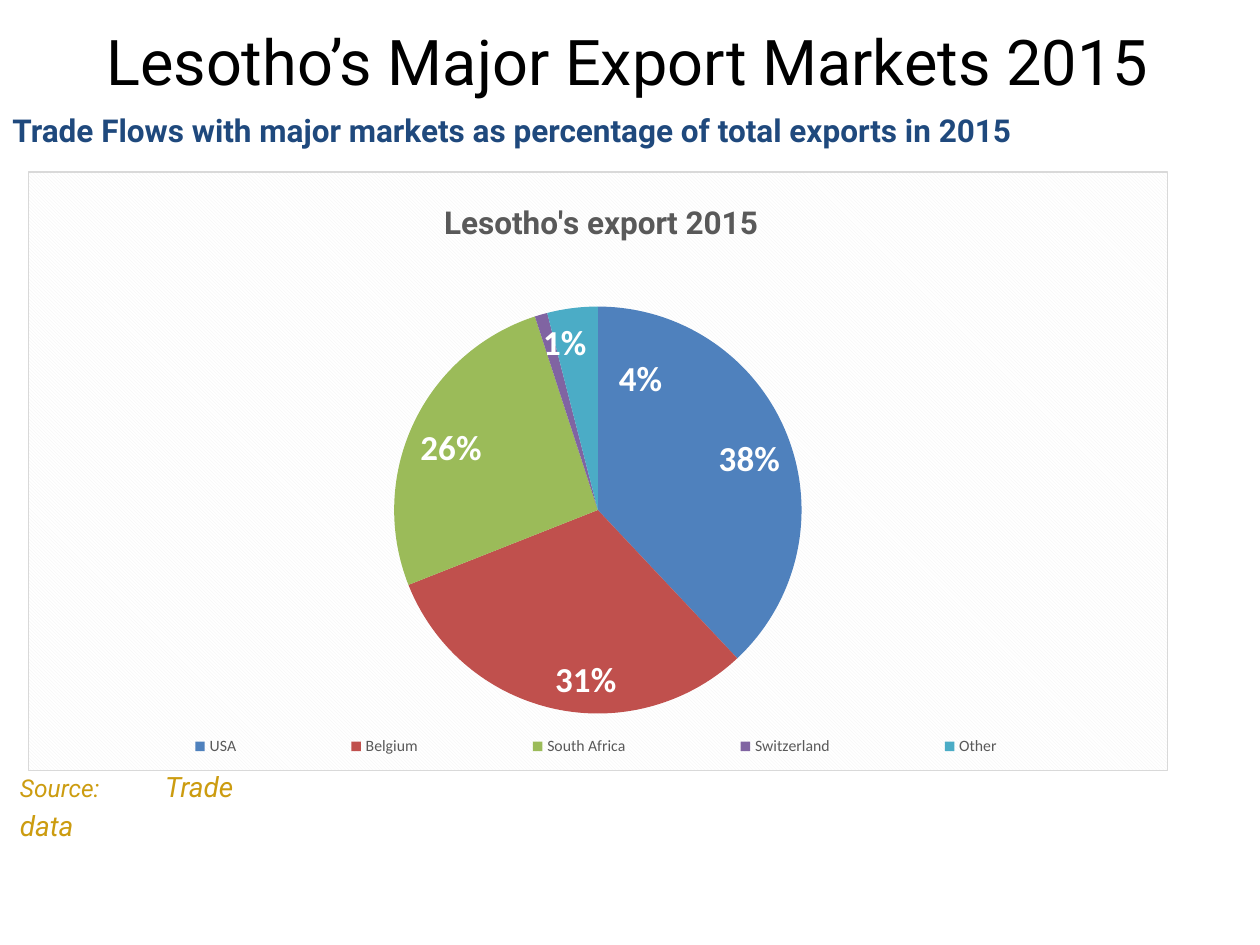
from pptx import Presentation
from pptx.chart.data import CategoryChartData
from pptx.dml.color import RGBColor
from pptx.enum.chart import XL_CHART_TYPE, XL_LABEL_POSITION, XL_LEGEND_POSITION
from pptx.enum.text import MSO_ANCHOR, PP_ALIGN
from pptx.oxml import parse_xml
from pptx.oxml.ns import nsdecls, qn
from pptx.util import Inches, Pt

MARKETS = {
    "USA": (38, "4F81BD"),
    "Belgium": (31, "C0504D"),
    "South Africa": (26, "9BBB59"),
    "Switzerland": (1, "8064A2"),
    "Other ": (4, "4BACC6"),
}


def color(hex_value):
    return RGBColor.from_string(hex_value)


def style_font(font, hex_value, **formats):
    font.color.rgb = color(hex_value)
    for attribute, value in formats.items():
        setattr(font, attribute, value)


def add_text(slide, box, runs, frame_format, paragraph_format):
    frame = slide.shapes.add_textbox(*map(Inches, box)).text_frame
    paragraph = frame.paragraphs[0]
    for target, formats in ((frame, frame_format), (paragraph, paragraph_format)):
        for attribute, value in formats.items():
            setattr(target, attribute, value)
    for text, hex_value, formats in runs:
        run = paragraph.add_run()
        run.text = text
        style_font(run.font, hex_value, name="Roboto", **formats)


def add_heading(slide, box):
    add_text(slide, box,
             [("Lesotho’s Major Export Markets 2015", "000000", {"size": Pt(36)})],
             {"word_wrap": True, "vertical_anchor": MSO_ANCHOR.MIDDLE},
             {"alignment": PP_ALIGN.CENTER})


def add_subtitle(slide, box):
    add_text(slide, box,
             [("Trade Flows with major markets as percentage of total exports in 2015",
               "1F497D", {"size": Pt(18), "bold": True})],
             {"word_wrap": True}, {})


def add_source(slide, box):
    add_text(slide, box,
             [("Source: ", "CC9C10", {"size": Pt(14), "italic": True}),
              ("Trade data", "CC9C10", {"size": Pt(16), "italic": True})],
             {"word_wrap": False},
             {"alignment": PP_ALIGN.JUSTIFY, "line_spacing": 1.15, "space_after": Pt(8)})


def manual_layout(target="", edge_mode=True, **values):
    parts = [f'<c:layoutTarget val="{target}"/>'] if target else []
    if edge_mode:
        parts += [f'<c:{axis}Mode val="edge"/>' for axis in "xy"]
    parts += [f'<c:{key} val="{value}"/>' for key, value in values.items()]
    return (f'<c:layout {nsdecls("c")}><c:manualLayout>{"".join(parts)}'
            '</c:manualLayout></c:layout>')


def place_part(part, after, layout):
    for old_layout in part.findall(qn("c:layout")):
        part.remove(old_layout)
    new_layout = parse_xml(layout)
    if after is None:
        part.insert(0, new_layout)
    else:
        part.find(qn(after)).addnext(new_layout)


def add_chart_background(chart):
    background = parse_xml(
        f'<c:spPr {nsdecls("c", "a")}><a:pattFill prst="dkDnDiag">'
        '<a:fgClr><a:srgbClr val="F2F2F2"/></a:fgClr>'
        '<a:bgClr><a:srgbClr val="FFFFFF"/></a:bgClr></a:pattFill>'
        '<a:ln w="9525"><a:solidFill><a:srgbClr val="D9D9D9"/></a:solidFill></a:ln></c:spPr>')
    chart.element.find(qn("c:chart")).addnext(background)


def add_export_chart(slide, box):
    data = CategoryChartData()
    data.categories = list(MARKETS)
    data.add_series("Series 1", [share for share, _ in MARKETS.values()])
    chart = slide.shapes.add_chart(XL_CHART_TYPE.PIE, *map(Inches, box), data).chart
    style_font(chart.font, "000000", name="Calibri", size=Pt(10))

    chart.has_title = True
    title = chart.chart_title.text_frame
    title.text = "Lesotho's export 2015"
    style_font(title.paragraphs[0].runs[0].font, "595959",
               name="Roboto", size=Pt(18), bold=True)

    chart.has_legend = True
    chart.legend.position = XL_LEGEND_POSITION.BOTTOM
    chart.legend.include_in_layout = False
    style_font(chart.legend.font, "595959", name="Calibri", size=Pt(9))

    plot = chart.plots[0]
    plot.vary_by_categories = True
    series = plot.series[0]
    for index, (_, hex_value) in enumerate(MARKETS.values()):
        fill = series.points[index].format.fill
        fill.solid()
        fill.fore_color.rgb = color(hex_value)

    labels = series.data_labels
    label_formats = {
        "show_percentage": True, "show_value": False, "number_format": "0%",
        "number_format_is_linked": False, "position": XL_LABEL_POSITION.INSIDE_END,
    }
    for attribute, value in label_formats.items():
        setattr(labels, attribute, value)
    style_font(labels.font, "FFFFFF", name="Calibri", size=Pt(20), bold=True)

    flags = "".join(
        f'<c:show{flag} val="{int(flag == "Percent")}"/>'
        for flag in ("LegendKey", "Val", "CatName", "SerName", "Percent", "BubbleSize"))
    other_label = parse_xml(
        f'<c:dLbl {nsdecls("c")}><c:idx val="4"/>'
        f'{manual_layout(edge_mode=False, x=0.04, y=0.07)}'
        f'<c:dLblPos val="inEnd"/>{flags}</c:dLbl>')
    chart.element.xpath(".//c:ser/c:dLbls")[0].insert(0, other_label)

    chart_parts = (
        ("c:title", "c:tx", manual_layout(x=0.36, y=0.04)),
        ("c:plotArea", None, manual_layout("inner", x=0.32, y=0.225, w=0.36, h=0.68)),
        ("c:legend", "c:legendPos", manual_layout(x=0.05, y=0.93, w=0.9, h=0.06)),
    )
    for tag, after, layout in chart_parts:
        place_part(chart.element.xpath(f"./c:chart/{tag}")[0], after, layout)
    add_chart_background(chart)


def main():
    presentation = Presentation()
    presentation.slide_width = Inches(10)
    presentation.slide_height = Inches(7.5)
    slide = presentation.slides.add_slide(presentation.slide_layouts[6])
    add_heading(slide, (0.48, 0.03, 9, 0.9))
    add_subtitle(slide, (0, 0.83, 9.96, 6.61))
    add_source(slide, (0.06, 6.02, 1.89, 0.39))
    add_export_chart(slide, (0.22, 1.36, 9.05, 4.76))
    presentation.save("out.pptx")


if __name__ == "__main__":
    main()
